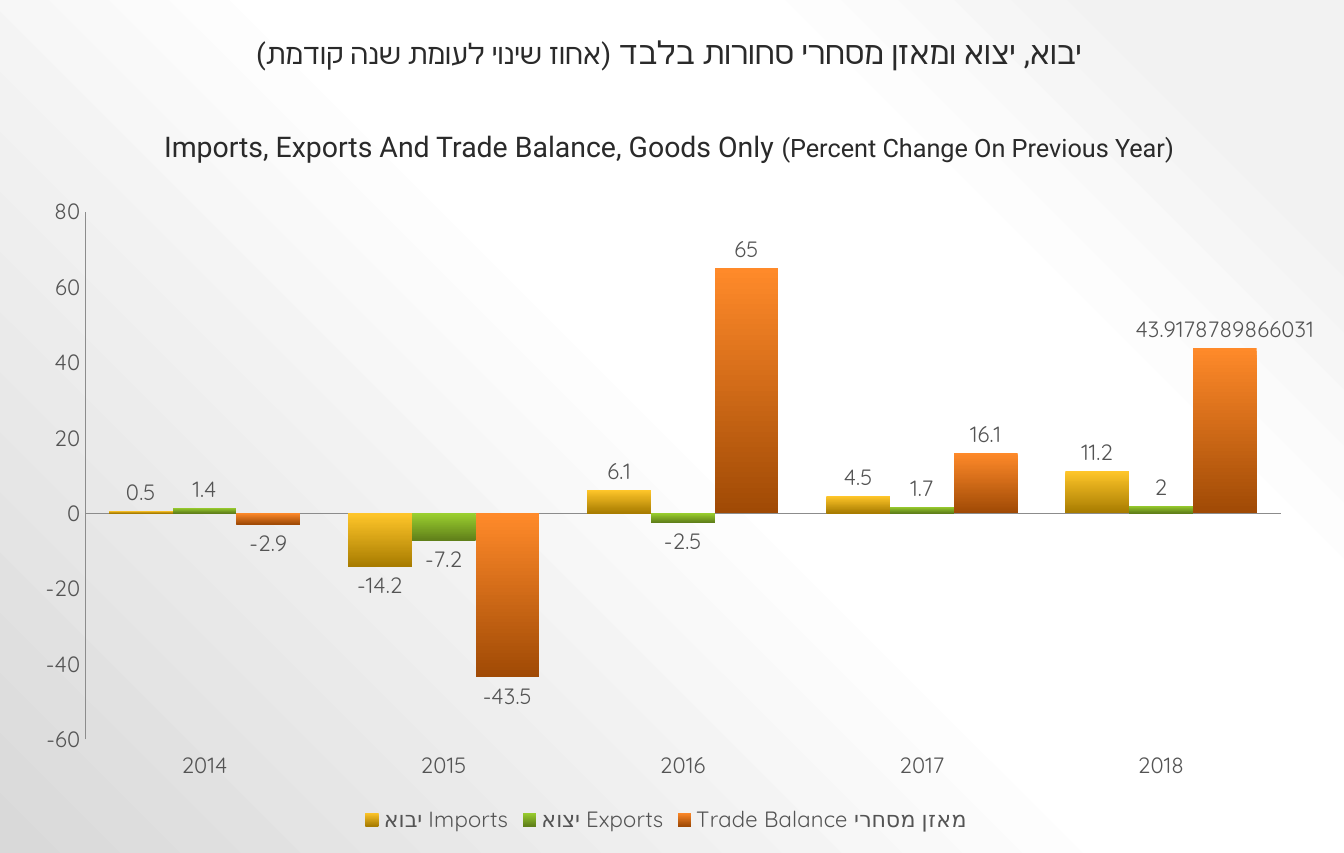
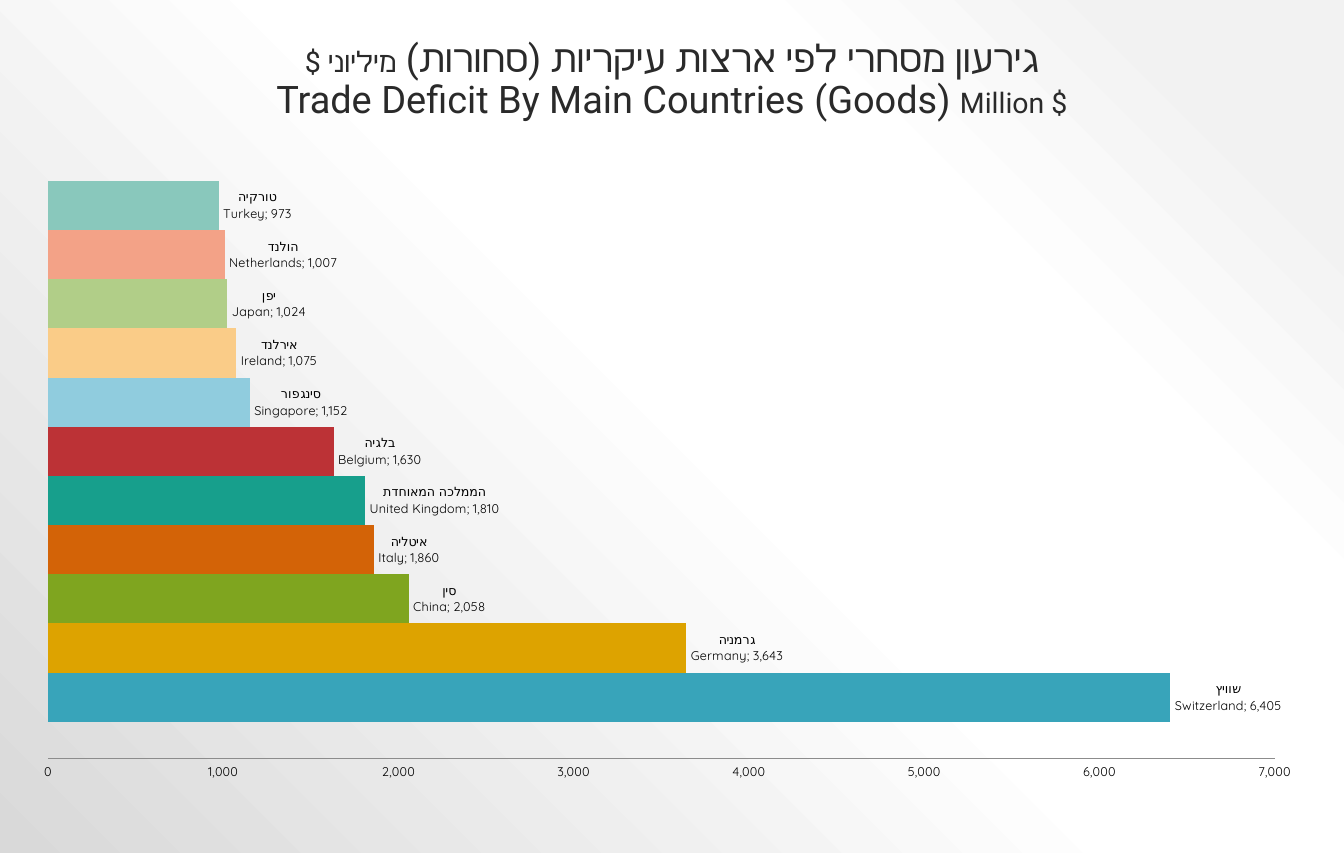
from lxml import etree
from pptx import Presentation
from pptx.chart.data import CategoryChartData
from pptx.dml.color import RGBColor
from pptx.enum.chart import XL_CHART_TYPE as CT, XL_LABEL_POSITION as LP
from pptx.enum.chart import XL_LEGEND_POSITION as LEG, XL_TICK_LABEL_POSITION as TL, XL_TICK_MARK as TM
from pptx.enum.text import MSO_ANCHOR, PP_ALIGN
from pptx.oxml import parse_xml
from pptx.oxml.ns import nsdecls, qn
from pptx.util import Cm, Inches, Pt

UNIT = 0.1
INK, GREY, BLACK, AXIS = "2A2A2A", "545454", "000000", "8C8C8C"
TITLE_FONT, CHART_FONT = "Roboto", "Quicksand"
BACKDROP = [(10, "F2F2F2"), (28, "FFFFFF"), (48, "FFFFFF"), (100, "D9D9D9")]

YEARS = ["2014", "2015", "2016", "2017", "2018"]
TRADE = [
    ("יבוא Imports", [0.5, -14.2, 6.1, 4.5, 11.2], ("FFC62A", "A87C00")),
    ("יצוא Exports", [1.4, -7.2, -2.5, 1.7, 2], ("9BD02F", "60801A")),
    ("Trade Balance מאזן מסחרי", [-2.9, -43.5, 65, 16.1, 43.9178789866031], ("FF8A2A", "A04A05")),
]
DEFICIT = [
    ("שוויץ\nSwitzerland", 6405, "38A4BA"),
    ("גרמניה\nGermany", 3643, "DDA300"),
    ("סין\nChina", 2058, "7FA51F"),
    ("איטליה\nItaly", 1860, "D36307"),
    ("הממלכה המאוחדת\nUnited Kingdom", 1810, "179F8C"),
    ("בלגיה\nBelgium", 1630, "BC3236"),
    ("סינגפור\nSingapore", 1152, "90CCDE"),
    ("אירלנד\nIreland", 1075, "FACC88"),
    ("יפן\nJapan", 1024, "B1CE88"),
    ("הולנד\nNetherlands", 1007, "F3A287"),
    ("טורקיה\nTurkey", 973, "89C8BC"),
]


def rgb(value):
    """Turn a hex string into a colour."""
    return RGBColor.from_string(value)


def place(box):
    """Turn grid columns and rows into slide lengths."""
    return [Inches(n * UNIT) for n in box]


def style(font, size, color, name):
    """Set the size, colour and typeface of a font."""
    font.size, font.name = Pt(size), name
    font.color.rgb = rgb(color)
    latin = font._element.find(qn("a:latin"))
    cs = etree.Element(qn("a:cs"))
    cs.set("typeface", name)
    latin.addnext(cs)


def add_backdrop(s):
    """Fill the background with a gradient that spreads from the top right corner."""
    s.background.fill.gradient()
    old = s._element.find(".//" + qn("a:gradFill"))
    stops = "".join(f'<a:gs pos="{pos * 1000}"><a:srgbClr val="{color}"/></a:gs>' for pos, color in BACKDROP)
    new = parse_xml(
        f'<a:gradFill {nsdecls("a")} rotWithShape="1"><a:gsLst>{stops}</a:gsLst>'
        '<a:path path="circle"><a:fillToRect l="100000" b="100000"/></a:path></a:gradFill>')
    old.getparent().replace(old, new)


def add_title(s, box, hebrew, english, gap=0):
    """Write a Hebrew line and an English line, each a list of (text, size)."""
    tf = s.shapes.add_textbox(*place(box)).text_frame
    tf.word_wrap, tf.vertical_anchor = True, MSO_ANCHOR.BOTTOM
    for i, runs in enumerate((hebrew, english)):
        p = tf.add_paragraph() if i else tf.paragraphs[0]
        p.alignment, p.line_spacing = PP_ALIGN.CENTER, 0.9
        p._p.get_or_add_pPr().set("rtl", str(1 - i))
        if i and gap:
            p.space_before = Pt(gap)
        for text, size in runs:
            r = p.add_run()
            r.text = text
            style(r.font, size, INK, TITLE_FONT)


def set_plot_area(chart, shares):
    """Fix the inner plot area as shares of the chart."""
    area = chart._chartSpace.find(".//" + qn("c:plotArea"))
    for old in area.findall(qn("c:layout")):
        area.remove(old)
    sizes = "".join(f'<c:{k} val="{v}"/>' for k, v in zip("xywh", shares))
    area.insert(0, parse_xml(
        f'<c:layout {nsdecls("c")}><c:manualLayout><c:layoutTarget val="inner"/>'
        f'<c:xMode val="edge"/><c:yMode val="edge"/>{sizes}</c:manualLayout></c:layout>'))


def add_bars(s, box, kind, cats, series, area, scale, gap, size, color):
    """Add a clustered chart with bare axes and labels at the bar ends."""
    data = CategoryChartData()
    data.categories = cats
    for name, values, _ in series:
        data.add_series(name, values)
    chart = s.shapes.add_chart(kind, *place(box), data).chart
    chart.has_title = chart.has_legend = False
    style(chart.font, size, color, CHART_FONT)
    set_plot_area(chart, area)
    plot, axis = chart.plots[0], chart.value_axis
    plot.gap_width, plot.overlap, plot.vary_by_categories = gap, 0, False
    axis.minimum_scale, axis.maximum_scale, axis.major_unit = scale
    axis.has_major_gridlines = False
    for ax in (axis, chart.category_axis):
        ax.major_tick_mark = ax.minor_tick_mark = TM.NONE
        ax.format.line.color.rgb = rgb(AXIS)
        ax.format.line.width = Pt(0.5)
    for ser, (_, _, colors) in zip(plot.series, series):
        ser.invert_if_negative = False
        fill = ser.format.fill
        if len(colors) == 2:
            fill.gradient()
            fill.gradient_angle = 270
            for stop, shade in zip(fill.gradient_stops, colors):
                stop.color.rgb = rgb(shade)
        else:
            fill.solid()
            fill.fore_color.rgb = rgb(colors[0])
        labels = ser.data_labels
        labels.show_value, labels.position = True, LP.OUTSIDE_END
        style(labels.font, size, color, CHART_FONT)
    return chart


def add_trade_slide(prs):
    """Add the slide on yearly changes in goods trade."""
    s = prs.slides.add_slide(prs.slide_layouts[6])
    add_backdrop(s)
    add_title(s, (1.6, 7.6, 114.4, 7.3),
              [("יבוא, יצוא ומאזן מסחרי סחורות בלבד ", 20), ("(אחוז שינוי לעומת שנה קודמת)", 18)],
              [("Imports, Exports And Trade Balance, Goods Only ", 18),
               ("(Percent Change On Previous Year)", 16)], gap=39)
    chart = add_bars(s, (1.8, 16.2, 113.7, 57.5), CT.COLUMN_CLUSTERED, YEARS, TRADE,
                     (0.05, 0.042, 0.926, 0.807), (-60, 80, 20), 75, 14, GREY)
    chart.category_axis.tick_label_position = TL.LOW
    chart.has_legend = True
    chart.legend.position, chart.legend.include_in_layout = LEG.BOTTOM, False
    style(chart.legend.font, 14, GREY, CHART_FONT)


def add_deficit_slide(prs):
    """Add the slide on the trade deficit by country."""
    s = prs.slides.add_slide(prs.slide_layouts[6])
    add_backdrop(s)
    add_title(s, (11.8, 2.1, 94.5, 9.1),
              [("גירעון מסחרי לפי ארצות עיקריות (סחורות) ", 24), ("מיליוני $", 18)],
              [("Trade Deficit By Main Countries (Goods) ", 24), ("Million $", 18)])
    series = [(name, [value], (color,)) for name, value, color in DEFICIT]
    chart = add_bars(s, (1.6, 11.5, 114.2, 58.3), CT.BAR_CLUSTERED, ["1"], series,
                     (0.023, 0.02, 0.944, 0.927), (0, 7000, 1000), 150, 8, BLACK)
    chart.category_axis.visible = False
    ticks = chart.value_axis.tick_labels
    ticks.number_format, ticks.number_format_is_linked = "#,##0", False
    for ser in chart.plots[0].series:
        labels = ser.data_labels
        labels.show_series_name = True
        labels.number_format, labels.number_format_is_linked = "#,##0", False
        separator = etree.Element(qn("c:separator"))
        separator.text = "; "
        labels._element.find(qn("c:showBubbleSize")).addnext(separator)


def main():
    """Build and save the presentation."""
    prs = Presentation()
    prs.slide_width, prs.slide_height = Cm(30), Inches(7.5)
    add_trade_slide(prs)
    add_deficit_slide(prs)
    prs.save("out.pptx")


if __name__ == "__main__":
    main()
